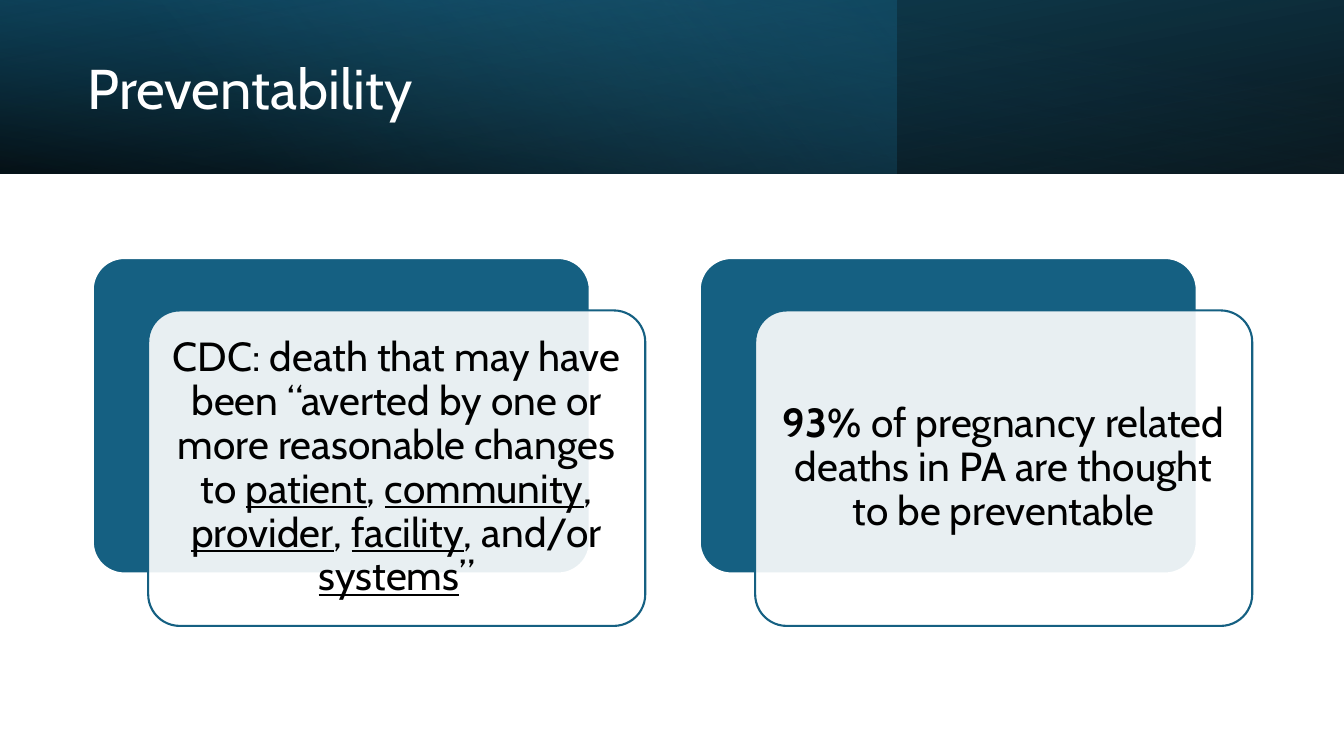
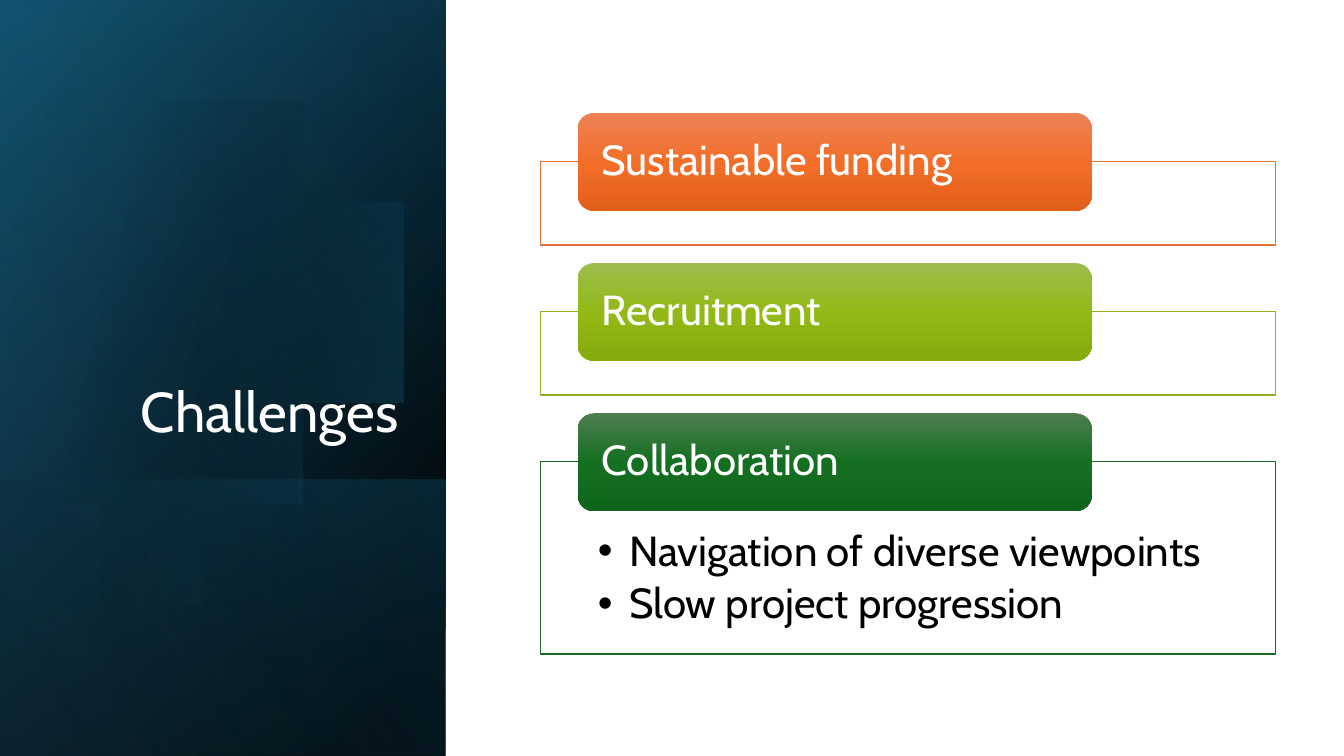
from math import acos, cos, pi, sin

from lxml.etree import SubElement
from pptx import Presentation
from pptx.dml.color import RGBColor
from pptx.enum.shapes import MSO_SHAPE as SHAPE
from pptx.enum.text import MSO_ANCHOR as ANCHOR, MSO_AUTO_SIZE as AUTO, PP_ALIGN as ALIGN
from pptx.oxml import parse_xml
from pptx.oxml.ns import nsdecls, qn
from pptx.util import Inches, Pt

FONT = "Cabin"
BLACK, WHITE = "000000", "FFFFFF"
TEAL, DEEP, SKY = "156082", "104862", "46B1E1"
TITLE_ONLY, TITLE_CONTENT = 5, 1

CARDS = [
    [("CDC: death that may have been “averted by one or more reasonable changes to ", ""),
     ("patient", "u"), (", ", ""), ("community", "u"), (", ", ""), ("provider", "u"),
     (", ", ""), ("facility", "u"), (", and/or ", ""), ("systems", "u"), ("”", "")],
    [("93% ", "b"), ("of pregnancy related deaths in PA are thought to be preventable", "")],
]
CHALLENGES = [
    ("Sustainable funding", "E97132", ("ED8257", "F26E29", "E25F1A"), []),
    ("Recruitment", "8EB21E", ("9CBD4E", "92B916", "85AB0D"), []),
    ("Collaboration", "196B24", ("4D7E50", "156F21", "0F661B"),
     ["Navigation of diverse viewpoints", "Slow project progression"]),
]


def rgb(color):
    """Turn a hex string into a colour."""
    return RGBColor.from_string(color)


def place(sp, x, y, w, h):
    """Move and size a shape in inches."""
    sp.left, sp.top, sp.width, sp.height = (Inches(v) for v in (x, y, w, h))


def paint(sp, color, opacity=100, line=None, weight=1):
    """Give a shape a plain fill and an optional outline."""
    sp.fill.solid()
    sp.fill.fore_color.rgb = rgb(color)
    if opacity < 100:
        clr = sp.element.spPr.find(qn("a:solidFill"))[0]
        SubElement(clr, qn("a:alpha")).set("val", str(opacity * 1000))
    if line:
        sp.line.color.rgb = rgb(line)
        sp.line.width = Pt(weight)


def paint_gradient(sp, stops, angle):
    """Give an unfilled shape a linear gradient of (position, colour, opacity) stops."""
    marks = "".join(
        f'<a:gs pos="{pos * 1000}"><a:srgbClr val="{color}">'
        f'<a:alpha val="{opacity * 1000}"/></a:srgbClr></a:gs>'
        for pos, color, opacity in stops)
    sp.element.spPr.insert(2, parse_xml(
        f'<a:gradFill {nsdecls("a")} rotWithShape="1"><a:gsLst>{marks}</a:gsLst>'
        f'<a:lin ang="{angle * 60000}" scaled="0"/></a:gradFill>'))
    sp.line.fill.background()


def add_box(slide, kind, x, y, w, h):
    """Add a shadowless preset shape."""
    sp = slide.shapes.add_shape(kind, *(Inches(v) for v in (x, y, w, h)))
    sp.shadow.inherit = False
    return sp


def add_band(slide, x, y, w, h, stops, angle, rot=0, flip=True):
    """Add a gradient band that covers the given area after its rotation."""
    sw, sh = (h, w) if rot == 90 else (w, h)
    sp = add_box(slide, SHAPE.RECTANGLE, x + (w - sw) / 2, y + (h - sh) / 2, sw, sh)
    paint_gradient(sp, stops, angle)
    sp.rotation = rot
    if flip:
        sp.element.spPr.xfrm.set("flipH", "1")


def add_disc(slide, cx, cy, radius, stops, angle):
    """Add a disc cut off at the left edge of the slide."""
    end, steps = acos(-cx / radius), 120
    turns = [end * (2 * i / steps - 1) for i in range(steps + 1)]
    points = [(max(0, cx + radius * cos(t)), cy + radius * sin(t)) for t in turns]
    builder = slide.shapes.build_freeform(*points[0], scale=float(Inches(1)))
    builder.add_line_segments(points[1:], close=True)
    sp = builder.convert_to_shape()
    sp.shadow.inherit = False
    paint_gradient(sp, stops, angle)


def set_frame(sp, anchor, insets):
    """Set the wrapping, anchor and insets (left, top, right, bottom) of a text frame."""
    tf = sp.text_frame
    tf.word_wrap, tf.auto_size, tf.vertical_anchor = True, AUTO.NONE, anchor
    tf.margin_left, tf.margin_top, tf.margin_right, tf.margin_bottom = (
        Inches(v) for v in insets)
    return tf


def write(p, runs, size, color, align=ALIGN.LEFT):
    """Fill a paragraph with (text, style) runs, where style is b, u or empty."""
    p.alignment, p.line_spacing, p.space_before = align, 0.9, Pt(0)
    for text, style in runs:
        r = p.add_run()
        r.text = text
        font = r.font
        font.name, font.size, font.color.rgb = FONT, Pt(size), rgb(color)
        font.bold, font.underline = style == "b", style == "u"


def set_title(slide, text, box, anchor, align):
    """Write the slide title and bring it in front of the bands."""
    title = slide.shapes.title
    title.element.getparent().append(title.element)
    place(title, *box)
    tf = set_frame(title, anchor, (0.1, 0.05, 0.1, 0.05))
    write(tf.paragraphs[0], [(text, "")], 40, WHITE, align)


def add_card(slide, x, y, runs):
    """Add a text card lying over a teal card."""
    w, h = 4.93, 3.13
    back = add_box(slide, SHAPE.ROUNDED_RECTANGLE, x, y, w, h)
    paint(back, TEAL, line=WHITE, weight=1.5)
    front = add_box(slide, SHAPE.ROUNDED_RECTANGLE, x + 0.55, y + 0.52, w, h)
    paint(front, WHITE, 90, TEAL, 1.5)
    for sp in (back, front):
        sp.adjustments[0] = 0.1
    tf = set_frame(front, ANCHOR.MIDDLE, (0.12,) * 4)
    write(tf.paragraphs[0], runs, 29, BLACK, ALIGN.CENTER)


def fill_list(body, items):
    """Write a bulleted list into the body placeholder."""
    tf = set_frame(body, ANCHOR.TOP, (0.57, 0.68, 0.57, 0.23))
    for i, item in enumerate(items):
        p = tf.add_paragraph() if i else tf.paragraphs[0]
        write(p, [(item, "")], 30, BLACK)
        p.space_after = Pt(5)
        pPr = p._p.get_or_add_pPr()
        pPr.set("marL", str(Inches(0.31)))
        pPr.set("indent", str(-Inches(0.31)))
        SubElement(pPr, qn("a:buFont")).set("typeface", "Arial")
        SubElement(pPr, qn("a:buChar")).set("char", "•")


def add_challenge(slide, y, name, line, shades, items):
    """Add an outlined frame with a gradient label on its top edge."""
    x, w, h = 5.36, 7.29, 1.91 if items else 0.83
    if items:
        frame = slide.placeholders[1]
        place(frame, x, y, w, h)
        fill_list(frame, items)
    else:
        frame = add_box(slide, SHAPE.RECTANGLE, x, y, w, h)
    paint(frame, WHITE, 90, line)
    label = add_box(slide, SHAPE.ROUNDED_RECTANGLE, x + 0.37, y - 0.48, 5.1, 0.97)
    paint_gradient(label, [(i * 50, c, 100) for i, c in enumerate(shades)], 90)
    tf = set_frame(label, ANCHOR.MIDDLE, (0.19, 0, 0.19, 0))
    write(tf.paragraphs[0], [(name, "")], 30, WHITE)


def build_preventability(prs):
    """Build the slide with a top band and two cards."""
    slide = prs.slides.add_slide(prs.slide_layouts[TITLE_ONLY])
    header = (0, 0, 13.33, 1.72)
    add_band(slide, *header, [(0, BLACK, 96), (100, DEEP, 100)], 100, rot=180)
    add_band(slide, 0, 0, 8.89, 1.72, [(0, TEAL, 41), (74, SKY, 0)], 140, flip=False)
    add_band(slide, *header, [(0, BLACK, 63), (78, TEAL, 15)], 260)
    set_title(slide, "Preventability", (0.77, 0.27, 7.72, 1.27), ANCHOR.MIDDLE, ALIGN.LEFT)
    for i, runs in enumerate(CARDS):
        add_card(slide, 0.92 + 6.02 * i, 2.56, runs)


def build_challenges(prs):
    """Build the slide with a side band and three labelled frames."""
    slide = prs.slides.add_slide(prs.slide_layouts[TITLE_CONTENT])
    side = (0, 0, 4.42, 7.5)
    add_band(slide, *side, [(8, BLACK, 100), (100, DEEP, 100)], 50, rot=90)
    add_band(slide, *side, [(0, BLACK, 0), (99, TEAL, 46)], 30, rot=90)
    add_band(slide, 0, 4.76, 4.42, 2.74, [(2, TEAL, 29), (100, BLACK, 30)], 130, rot=90)
    add_disc(slide, 1.43, 3.38, 2.29, [(29, BLACK, 0), (100, TEAL, 43)], 14)
    add_band(slide, *side, [(0, BLACK, 0), (99, SKY, 11)], 120, rot=90)
    set_title(slide, "Challenges", (0.64, 1.84, 3.41, 2.62), ANCHOR.BOTTOM, ALIGN.RIGHT)
    for i, challenge in enumerate(CHALLENGES):
        add_challenge(slide, 1.6 + 1.49 * i, *challenge)


def main():
    """Build and save the presentation."""
    prs = Presentation()
    prs.slide_width, prs.slide_height = Inches(13.33), Inches(7.5)
    build_preventability(prs)
    build_challenges(prs)
    prs.save("out.pptx")


if __name__ == "__main__":
    main()
